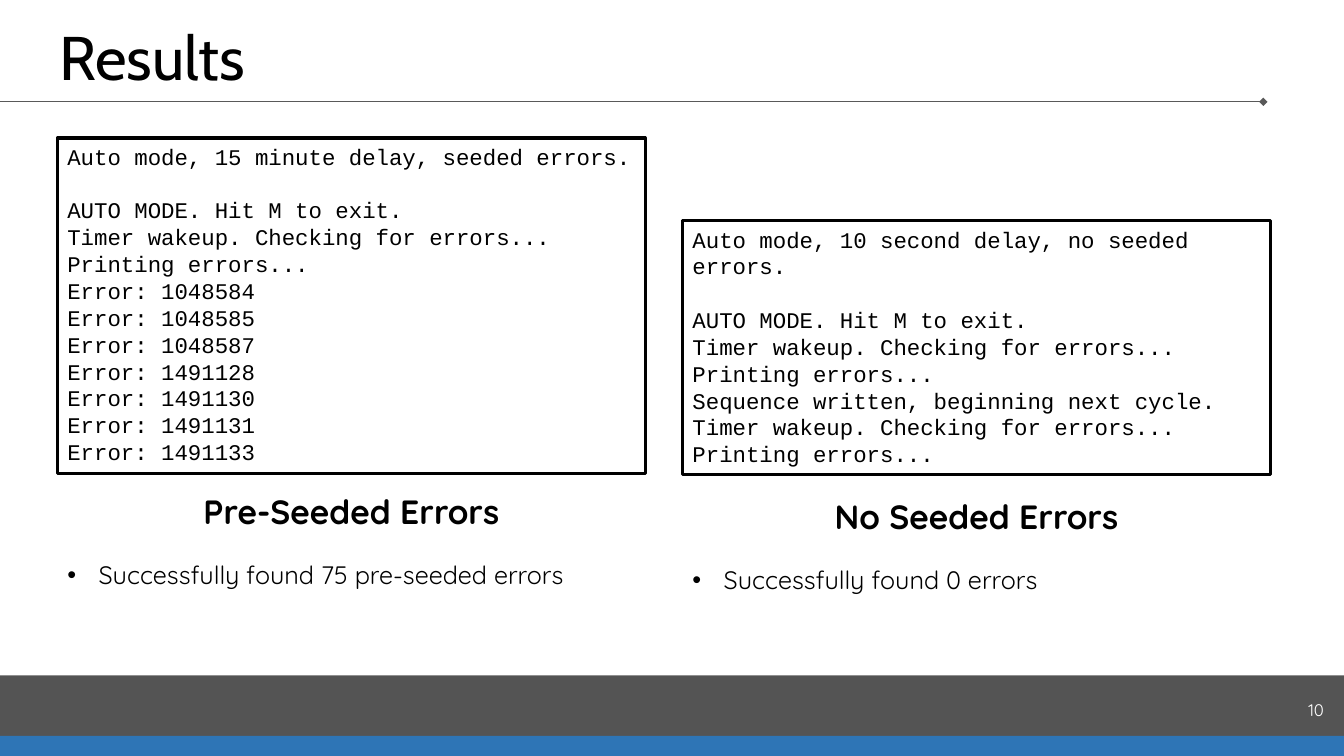
"""Build the Results slide comparing seeded and unseeded error runs."""
from lxml.etree import SubElement
from pptx import Presentation
from pptx.dml.color import RGBColor
from pptx.enum.shapes import MSO_CONNECTOR, MSO_SHAPE
from pptx.enum.text import MSO_ANCHOR as Anchor, PP_ALIGN as Align
from pptx.oxml.ns import qn
from pptx.util import Pt

PX = 9144
WIDTH, HEIGHT = 1333, 750
BLACK = RGBColor(0, 0, 0)
WHITE = RGBColor(255, 255, 255)
GRAY = RGBColor(0x59, 0x59, 0x59)
BLUE = RGBColor(0x2E, 0x75, 0xB6)
BODY_FONT, CODE_FONT, TITLE_FONT = "Quicksand", "Courier New", "Cabin"

TITLE = "Results"
PAGE_NUMBER = "10"
AUTO_MODE = "AUTO MODE. Hit M to exit."
CHECK = ["Timer wakeup. Checking for errors...", "Printing errors..."]
ERRORS = [1048584, 1048585, 1048587, 1491128, 1491130, 1491131, 1491133]
RUNS = [
    {
        "left": 57, "top": 137, "height": 333, "caption_top": 482,
        "log": ["Auto mode, 15 minute delay, seeded errors.", AUTO_MODE, *CHECK,
                *[f"Error: {number}" for number in ERRORS]],
        "heading": "Pre-Seeded Errors",
        "finding": "Successfully found 75 pre-seeded errors",
    },
    {
        "left": 677, "top": 219, "height": 252, "caption_top": 487,
        "log": ["Auto mode, 10 second delay, no seeded errors.", AUTO_MODE, *CHECK,
                "Sequence written, beginning next cycle.", *CHECK],
        "heading": "No Seeded Errors",
        "finding": "Successfully found 0 errors",
    },
]
RUN_WIDTH, CAPTION_HEIGHT = 583, 111
BULLET_INDENT = 31


def scaled(*lengths):
    return [length * PX for length in lengths]


def add_box(page, *place, fill):
    box = page.shapes.add_shape(MSO_SHAPE.RECTANGLE, *scaled(*place))
    box.shadow.inherit = False
    box.fill.solid()
    box.fill.fore_color.rgb = fill
    box.line.fill.background()
    return box


def add_text(page, *place, anchor=Anchor.TOP):
    box = page.shapes.add_textbox(*scaled(*place))
    box.text_frame.word_wrap = True
    box.text_frame.vertical_anchor = anchor
    return box.text_frame


def write(para, text, font, size, color=BLACK, align=Align.LEFT, bold=False):
    para.add_run().text = text
    para.alignment = align
    para.font.name = font
    para.font.size = Pt(size)
    para.font.color.rgb = color
    para.font.bold = bold


def add_bullet(para):
    properties = para._p.get_or_add_pPr()
    properties.set("marL", str(BULLET_INDENT * PX))
    properties.set("indent", str(-BULLET_INDENT * PX))
    SubElement(properties, qn("a:buFont"), typeface="Arial")
    SubElement(properties, qn("a:buChar"), char="•")


def add_frame(page):
    band = add_box(page, 0, 670, WIDTH, 60, fill=BLACK)
    color = band.fill._xPr.find(qn("a:solidFill"))[0]
    SubElement(color, qn("a:alpha"), val="67000")

    rule = page.shapes.add_connector(MSO_CONNECTOR.STRAIGHT, *scaled(0, 101, 1253, 101))
    rule.line.color.rgb = GRAY
    rule.line.width = Pt(1)
    SubElement(rule.line._get_or_add_ln(), qn("a:tailEnd"), type="diamond")
    SubElement(rule._element.spPr, qn("a:effectLst"))

    add_box(page, 0, 730, WIDTH, 20, fill=BLUE)
    title = add_text(page, 49, 19, 1150, 79, anchor=Anchor.BOTTOM).paragraphs[0]
    title.line_spacing = 0.9
    write(title, TITLE, TITLE_FONT, 44)
    number = add_text(page, 1023, 684, 300, 40, anchor=Anchor.MIDDLE).paragraphs[0]
    write(number, PAGE_NUMBER, BODY_FONT, 12, WHITE, Align.RIGHT)


def add_run_result(page, run):
    box = add_box(page, run["left"], run["top"], RUN_WIDTH, run["height"], fill=WHITE)
    box.line.color.rgb = BLACK
    box.line.width = Pt(2.25)
    frame = box.text_frame
    frame.word_wrap = True
    frame.vertical_anchor = Anchor.TOP
    for index, line in enumerate(run["log"]):
        para = frame.add_paragraph() if index else frame.paragraphs[0]
        if index == 1:
            para.space_before = Pt(19)
        write(para, line, CODE_FONT, 16)

    caption = add_text(page, run["left"], run["caption_top"], RUN_WIDTH, CAPTION_HEIGHT)
    write(caption.paragraphs[0], run["heading"], BODY_FONT, 24, align=Align.CENTER, bold=True)
    finding = caption.add_paragraph()
    finding.space_before = Pt(20)
    add_bullet(finding)
    write(finding, run["finding"], BODY_FONT, 18)


def main():
    deck = Presentation()
    deck.slide_width, deck.slide_height = scaled(WIDTH, HEIGHT)
    page = deck.slides.add_slide(deck.slide_layouts[6])
    add_frame(page)
    for run in RUNS:
        add_run_result(page, run)
    deck.save("out.pptx")


if __name__ == "__main__":
    main()
